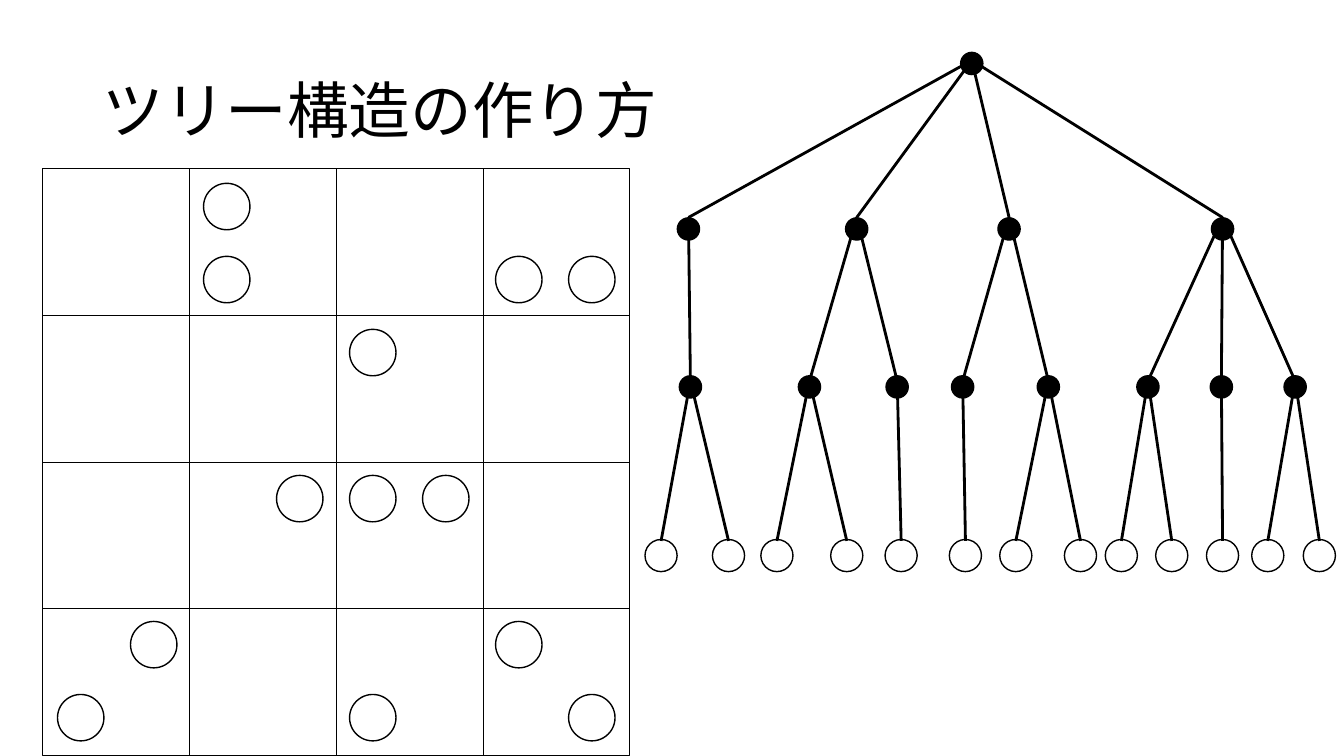
import pptx
import pptx.dml.color
import pptx.enum.shapes
import pptx.enum.text
import pptx.oxml
import pptx.util
from pptx.util import Cm

COLOURS = {"ink": "000000"}

BOARD_LEFT, BOARD_TOP, BOARD_SIDE = 1.07, 4.24, 14.8
BOARD_CELLS = 4
POINT_MARGIN, POINT_STEP, POINT_SIZE = 0.38, 1.84, 1.17
# Column and row of each point, counted in half cells
POINTS = [(2, 0), (2, 1), (6, 1), (7, 1), (4, 2), (3, 4), (4, 4), (5, 4),
          (1, 6), (6, 6), (0, 7), (4, 7), (7, 7)]

NODE_SIZE, LEAF_SIZE = 0.56, 0.81
LEVEL_CENTRES = [1.6, 5.77, 9.75, 14.0]
LEVEL_JOINTS = [1.52, 5.48, 9.6, 13.63]
# Each node is its horizontal centre and its children
TREE = (24.49, [
    (17.35, [(17.4, [(16.66, []), (18.36, [])])]),
    (21.59, [(20.4, [(19.58, []), (21.34, [])]),
             (22.61, [(22.71, [])])]),
    (25.43, [(24.26, [(24.33, [])]),
             (26.42, [(25.6, []), (27.23, [])])]),
    (30.81, [(28.93, [(28.26, []), (29.53, [])]),
             (30.78, [(30.81, [])]),
             (32.64, [(31.95, []), (33.25, [])])]),
])


def ink():
    return pptx.dml.color.RGBColor.from_string(COLOURS["ink"])


def add_title(slide, words):
    title = slide.shapes.title
    title.left, title.top = Cm(2.33), Cm(1.01)
    title.width, title.height = Cm(29.21), Cm(3.68)
    frame = title.text_frame
    frame.text = words
    frame.auto_size = pptx.enum.text.MSO_AUTO_SIZE.NONE
    frame.vertical_anchor = pptx.enum.text.MSO_ANCHOR.MIDDLE
    para = frame.paragraphs[0]
    para.alignment = pptx.enum.text.PP_ALIGN.LEFT
    para.line_spacing = 0.9
    font = para.runs[0].font
    font.name = "Calibri"
    font.size = pptx.util.Pt(44)
    font.color.rgb = ink()


def add_outline(slide, kind, left, top, side, filled=False):
    """Draw a square-proportioned shape, solid or empty."""
    shape = slide.shapes.add_shape(kind, Cm(left), Cm(top), Cm(side), Cm(side))
    shape.shadow.inherit = False
    if filled:
        shape.fill.solid()
        shape.fill.fore_color.rgb = ink()
    else:
        shape.fill.background()
    shape.line.color.rgb = ink()
    shape.line.width = pptx.util.Pt(1)


def add_circle(slide, left, top, size, filled=False):
    add_outline(slide, pptx.enum.shapes.MSO_SHAPE.OVAL, left, top, size, filled)


def add_line(slide, start, end, weight):
    line = slide.shapes.add_connector(
        pptx.enum.shapes.MSO_CONNECTOR.STRAIGHT,
        Cm(start[0]), Cm(start[1]), Cm(end[0]), Cm(end[1]))
    line.line.color.rgb = ink()
    line.line.width = pptx.util.Pt(weight)
    properties = line._element.spPr
    properties.append(pptx.oxml.parse_xml(
        '<a:effectLst xmlns:a="http://schemas.openxmlformats.org/drawingml/2006/main"/>'))


def add_board(slide):
    add_outline(slide, pptx.enum.shapes.MSO_SHAPE.RECTANGLE,
                BOARD_LEFT, BOARD_TOP, BOARD_SIDE)
    right, bottom = BOARD_LEFT + BOARD_SIDE, BOARD_TOP + BOARD_SIDE
    for index in range(1, BOARD_CELLS):
        offset = index * BOARD_SIDE / BOARD_CELLS
        x, y = BOARD_LEFT + offset, BOARD_TOP + offset
        add_line(slide, (BOARD_LEFT, y), (right, y), 0.5)
        add_line(slide, (x, BOARD_TOP), (x, bottom), 0.5)
    for column, row in POINTS:
        add_circle(slide, BOARD_LEFT + POINT_MARGIN + column * POINT_STEP,
                   BOARD_TOP + POINT_MARGIN + row * POINT_STEP, POINT_SIZE)


def add_branches(slide, node, level=0):
    x, children = node
    for child in children:
        add_line(slide, (x, LEVEL_JOINTS[level]),
                 (child[0], LEVEL_JOINTS[level + 1]), 2)
        add_branches(slide, child, level + 1)


def add_nodes(slide, node, level=0):
    x, children = node
    size = NODE_SIZE if children else LEAF_SIZE
    add_circle(slide, x - size / 2, LEVEL_CENTRES[level] - size / 2, size,
               filled=bool(children))
    for child in children:
        add_nodes(slide, child, level + 1)


def main():
    deck = pptx.Presentation()
    deck.slide_width, deck.slide_height = Cm(33.87), Cm(19.05)
    slide = deck.slides.add_slide(deck.slide_layouts.get_by_name("Title Only"))
    add_title(slide, "ツリー構造の作り方")
    add_board(slide)
    add_branches(slide, TREE)
    add_nodes(slide, TREE)
    deck.save("out.pptx")


if __name__ == "__main__":
    main()
